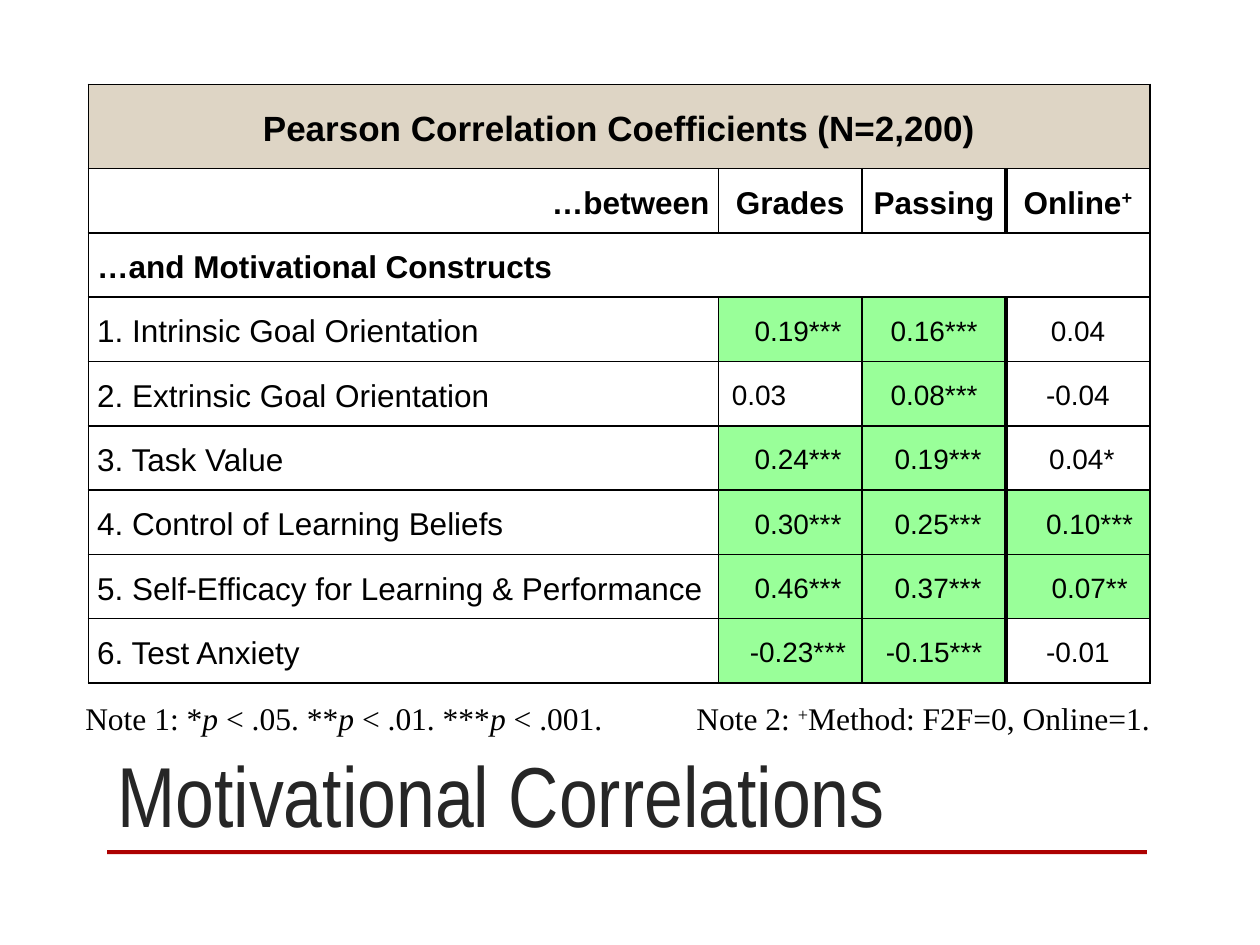
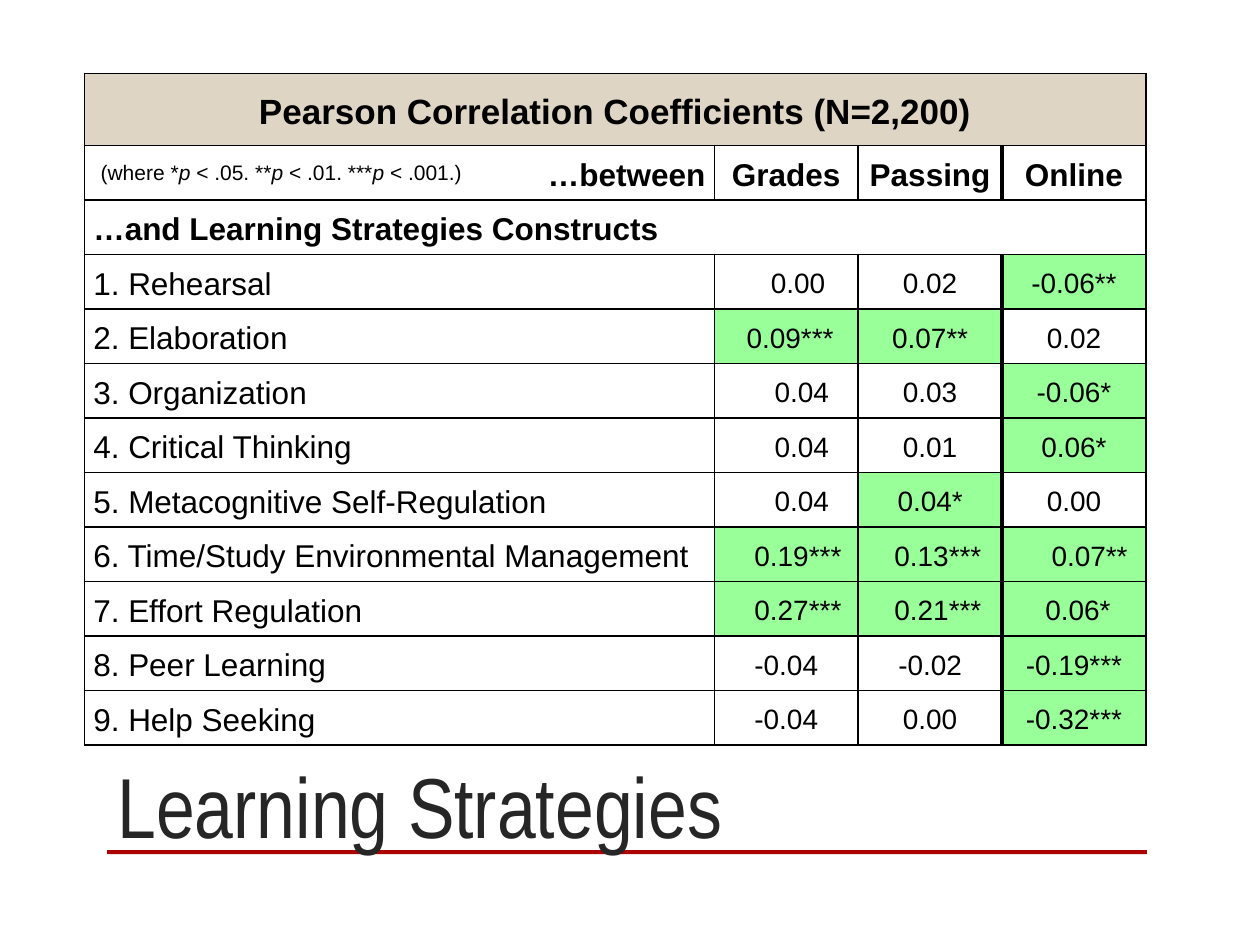
from lxml import etree
from pptx import Presentation
from pptx.dml.color import RGBColor
from pptx.enum.shapes import MSO_SHAPE
from pptx.enum.text import MSO_ANCHOR, MSO_AUTO_SIZE, PP_ALIGN
from pptx.oxml.ns import qn
from pptx.util import Cm, Pt

RECT = MSO_SHAPE.RECTANGLE
MID, LOW = MSO_ANCHOR.MIDDLE, MSO_ANCHOR.BOTTOM
LEFT, MIDST, RIGHT = PP_ALIGN.LEFT, PP_ALIGN.CENTER, PP_ALIGN.RIGHT
FIXED = MSO_AUTO_SIZE.NONE

BLACK, GREY, RED, TAN, GREEN = "000000", "262626", "AD0101", "DED5C5", "99FF99"
SANS, SLIM, SERIF = "Arial", "Arial Narrow", "Times New Roman"
WIDE, SLOT = 12.7, 2.9
PAD, SPACE = 0.18, 0.157
THIN, THICK = 1, 3

LEVELS = [("*", ""), ("p", "i"), (" < .05. **", ""), ("p", "i"),
          (" < .01. ***", ""), ("p", "i")]

# Each row: label, three values, and how many spaces each value is nudged.
MOTIVES = [
    ("1. Intrinsic Goal Orientation", ("0.19***", "0.16***", "0.04"), (2, 0, 0)),
    ("2. Extrinsic Goal Orientation", ("0.03", "0.08***", "-0.04"), (-8, 0, 0)),
    ("3. Task Value", ("0.24***", "0.19***", "0.04*"), (2, 1, 1)),
    ("4. Control of Learning Beliefs", ("0.30***", "0.25***", "0.10***"), (2, 1, 3)),
    ("5. Self-Efficacy for Learning & Performance",
     ("0.46***", "0.37***", "0.07**"), (2, 1, 3)),
    ("6. Test Anxiety", ("-0.23***", "-0.15***", "-0.01"), (2, 0, 0)),
]
TACTICS = [
    ("1. Rehearsal", ("0.00", "0.02", "-0.06**"), (3, 0, 0)),
    ("2. Elaboration", ("0.09***", "0.07**", "0.02"), (1, 0, 0)),
    ("3. Organization", ("0.04", "0.03", "-0.06*"), (4, 0, 0)),
    ("4. Critical Thinking", ("0.04", "0.01", "0.06*"), (4, 0, 0)),
    ("5. Metacognitive Self-Regulation", ("0.04", "0.04*", "0.00"), (4, 0, 0)),
    ("6. Time/Study Environmental Management",
     ("0.19***", "0.13***", "0.07**"), (3, 2, 4)),
    ("7. Effort Regulation", ("0.27***", "0.21***", "0.06*"), (3, 2, 1)),
    ("8. Peer Learning", ("-0.04", "-0.02", "-0.19***"), (0, 0, 0)),
    ("9. Help Seeking", ("-0.04", "0.00", "-0.32***"), (0, 0, 0)),
]


def paint(part, code):
    """Give a fill or a font the colour of a hex string."""
    if hasattr(part, "solid"):
        part.solid()
        part.fore_color.rgb = RGBColor.from_string(code)
    else:
        part.color.rgb = RGBColor.from_string(code)


def write(para, runs, size, face=SANS, tint=BLACK, bold=False):
    """Add (text, style) runs; style i is italic and + is raised."""
    for text, style in runs:
        run = para.add_run()
        run.text = text
        font = run.font
        font.size, font.name, font.bold = Pt(size), face, bold
        font.italic = style == "i"
        paint(font, tint)
        if style == "+":
            font._element.set("baseline", "30000")


def edge(cell, **sides):
    """Draw the borders of a cell; a width of 0 hides that side."""
    props = cell._tc.get_or_add_tcPr()
    for side in "LRTB":
        width = sides.get(side, THIN)
        line = etree.SubElement(props, qn(f"a:ln{side}"), w=str(Pt(width)))
        if width:
            fill = etree.SubElement(line, qn("a:solidFill"))
            etree.SubElement(fill, qn("a:srgbClr"), val=BLACK)
        else:
            etree.SubElement(line, qn("a:noFill"))


def put(cell, runs, size, align=LEFT, bold=False, pad=PAD, shift=0, gap=0):
    """Write one paragraph in a cell, nudged sideways by some spaces."""
    cell.vertical_anchor = MID
    cell.margin_top = cell.margin_bottom = 0
    cell.margin_left = Cm(pad + max(shift, 0) * SPACE)
    cell.margin_right = Cm(pad + max(-shift, 0) * SPACE)
    para = cell.text_frame.paragraphs[0]
    para.alignment, para.line_spacing = align, 1.15
    if gap:
        para.space_after = Pt(gap)
        para.space_before = Pt(gap)
    write(para, runs, size, bold=bold)


def grid(slide, box, top, group, mark, rows, least):
    """Build the table; values with at least so many stars are green."""
    x, y, high = box
    count = len(rows) + 3
    frame = slide.shapes.add_table(count, 4, Cm(x), Cm(y),
                                   Cm(WIDE + 3 * SLOT), Cm(high))
    table = frame.table
    table.first_row = table.horz_banding = False
    for col, width in zip(table.columns, (WIDE, SLOT, SLOT, SLOT)):
        col.width = Cm(width)
    for i, row in enumerate(table.rows):
        row.height = Cm(top if i == 0 else (high - top) / (count - 1))
        for j, cell in enumerate(row.cells):
            if i == 2:
                edge(cell, L=THIN if j == 0 else 0, R=THIN if j == 3 else 0)
                cell.margin_top = cell.margin_bottom = 0
            elif i:
                edge(cell, L=THICK if j == 3 else THIN, R=THICK if j == 2 else THIN)
            else:
                edge(cell)
            cell.fill.background()

    head = table.cell(0, 0)
    head.merge(table.cell(0, 3))
    paint(head.fill, TAN)
    put(head, [("Pearson Correlation Coefficients (N=2,200)", "")], 20, MIDST, True)
    put(table.cell(1, 0), [("…between", "")], 18, RIGHT, True)
    names = [[("Grades", "")], [("Passing", "")], [("Online", "")] + mark]
    for j, runs in enumerate(names, 1):
        put(table.cell(1, j), runs, 18, MIDST, True, pad=0)
    put(table.cell(2, 0), [(f"…and {group} Constructs", "")], 18, bold=True)

    for i, (label, values, shifts) in enumerate(rows, 3):
        put(table.cell(i, 0), [(label, "")], 18)
        table.cell(i, 0).margin_right = 0
        for j, (value, shift) in enumerate(zip(values, shifts), 1):
            cell = table.cell(i, j)
            put(cell, [(value, "")], 16, MIDST, shift=shift, gap=3)
            if value.count("*") >= least:
                paint(cell.fill, GREEN)


def title(slide, text, top, high):
    """Place and style the slide title."""
    shape = slide.shapes.title
    shape.left, shape.top = Cm(2.11), Cm(top)
    shape.width, shape.height = Cm(18.85), Cm(high)
    frame = shape.text_frame
    frame.auto_size, frame.vertical_anchor = FIXED, LOW
    para = frame.paragraphs[0]
    para.alignment = LEFT
    write(para, [(text, "")], 48.6, SLIM, GREY)


def note(slide, box, runs, size, face, stop=0):
    """Add a note line, with an optional tab stop."""
    shape = slide.shapes.add_textbox(*map(Cm, box))
    shape.text_frame.word_wrap = True
    para = shape.text_frame.paragraphs[0]
    if stop:
        tabs = etree.SubElement(para._p.get_or_add_pPr(), qn("a:tabLst"))
        etree.SubElement(tabs, qn("a:tab"), pos=str(Cm(stop)), algn="l")
    write(para, runs, size, face)


def rule(slide):
    """Draw the red rule and hand it to the slide's layout."""
    bar = slide.shapes.add_shape(RECT, Cm(2.16), Cm(17.14), Cm(20.96), Cm(0.08))
    bar.shadow.inherit = False
    paint(bar.fill, RED)
    bar.line.fill.background()
    slide.slide_layout.shapes.element.append(bar._element)


def main():
    """Build both slides and save the deck."""
    deck = Presentation()
    deck.slide_width, deck.slide_height = Cm(25.4), Cm(19.05)
    plain = deck.slide_layouts[5]

    first = deck.slides.add_slide(plain)
    rule(first)
    title(first, "Motivational Correlations", 12.7, 4.45)
    grid(first, (1.78, 1.7, 12.07), 1.7, "Motivational", [("+", "+")], MOTIVES, 2)
    note(first, (1.47, 13.97, 22.23, 1.02),
         [("Note 1: ", "")] + LEVELS + [(" < .001.\tNote 2: ", ""), ("+", "+"),
                                        ("Method: F2F=0, Online=1.", "")],
         18, SERIF, 12.32)

    second = deck.slides.add_slide(plain)
    title(second, "Learning Strategies", 15.04, 2.33)
    grid(second, (1.7, 1.48, 13.54), 1.45, "Learning Strategies", [], TACTICS, 1)
    note(second, (1.78, 3.1, 8.74, 0.76),
         [("(where ", "")] + LEVELS + [(" < .001.)", "")], 12, SANS)

    deck.save("out.pptx")


if __name__ == "__main__":
    main()
